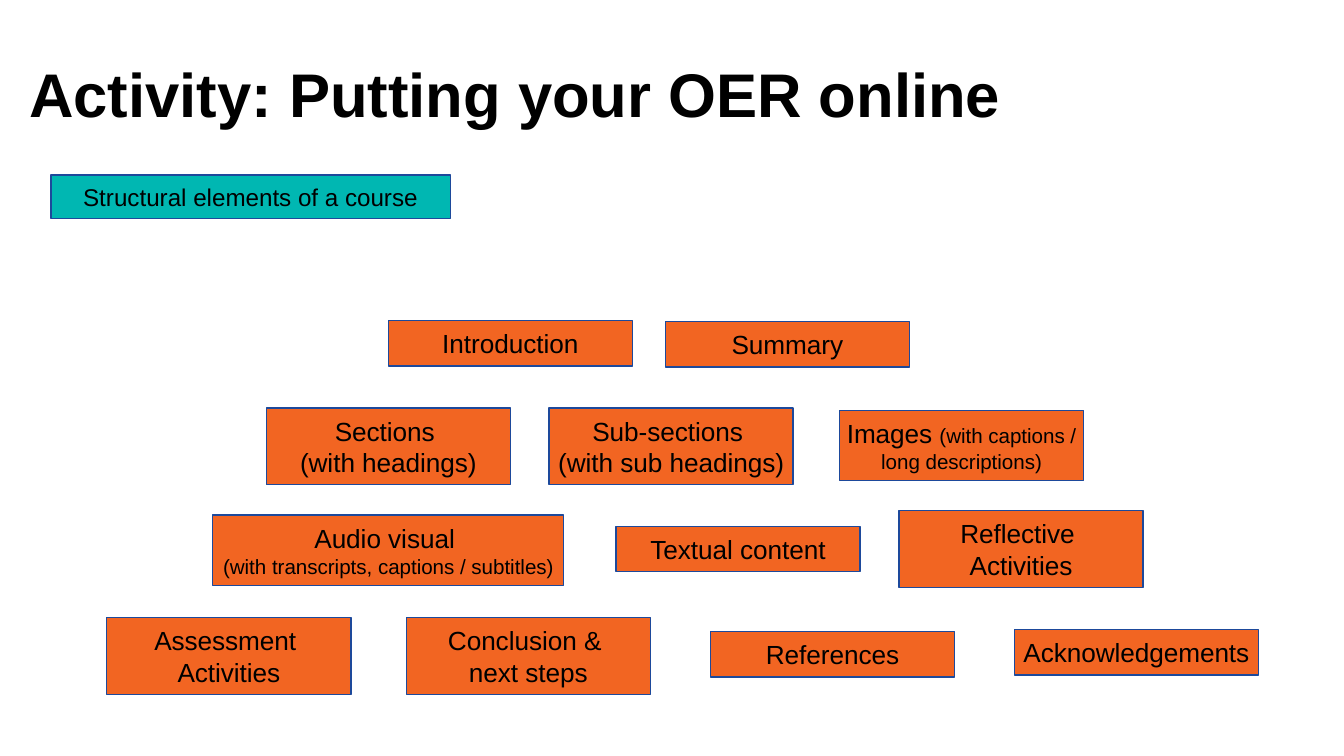
"""Build the slide on the structural elements of an online course."""
from pptx import Presentation
from pptx.dml.color import RGBColor
from pptx.enum.shapes import MSO_SHAPE
from pptx.enum.text import MSO_ANCHOR, PP_ALIGN
from pptx.util import Pt


def rgb(code):
    return RGBColor.from_string(code)


def write(p, text, size=18.67, bold=False, align=PP_ALIGN.CENTER):
    p.alignment = align
    for i, line in enumerate(text.split("\n")):
        if i:
            p.add_line_break()
        if line:
            r = p.add_run()
            r.text = line
            r.font.name = "Arial"
            r.font.size = Pt(size)
            r.font.bold = bold
            r.font.color.rgb = rgb("000000")


prs = Presentation()
prs.slide_width, prs.slide_height = Pt(960), Pt(540)
s = prs.slides.add_slide(prs.slide_layouts[5])

title = s.shapes.title
title.left, title.top, title.width, title.height = Pt(13.7), Pt(36), Pt(715.7), Pt(60.5)
tf = title.text_frame
tf.word_wrap = False
tf.vertical_anchor = MSO_ANCHOR.MIDDLE
write(tf.paragraphs[0], "Activity: Putting your OER online", size=44, bold=True, align=PP_ALIGN.LEFT)

TEAL, ORANGE = "00B7B2", "F26522"
LARGE, MEDIUM, SMALL = 18.67, 17.33, 14.67
WIDE, ONE, TWO, MIXED = 174.4, 32.4, 54.7, 50.2
boxes = [
    (36.3, 125, 285.3, 31, TEAL, [("Structural elements of a course", MEDIUM)]),
    (277.3, 229, WIDE, ONE, ORANGE, [("Introduction", LARGE)]),
    (475.2, 229.7, WIDE, ONE, ORANGE, [("Summary", LARGE)]),
    (190.2, 291.5, WIDE, TWO, ORANGE, [("Sections \n(with headings)", LARGE)]),
    (392.2, 291.5, WIDE, TWO, ORANGE, [("Sub-sections \n(with sub headings)", LARGE)]),
    (599.6, 293.2, WIDE, MIXED, ORANGE,
     [("Images ", LARGE), ("(with captions / long descriptions)", SMALL)]),
    (152, 368, 250.6, MIXED, ORANGE,
     [("Audio visual \n", LARGE), ("(with transcripts, captions / subtitles)", SMALL)]),
    (440, 376, WIDE, ONE, ORANGE, [("Textual content", LARGE)]),
    (642.2, 364.8, WIDE, TWO, ORANGE, [("Reflective \nActivities", LARGE)]),
    (76.3, 441.2, WIDE, TWO, ORANGE, [("Assessment \nActivities", LARGE)]),
    (290.2, 441.2, WIDE, TWO, ORANGE, [("Conclusion & \nnext steps", LARGE)]),
    (507.5, 451.2, WIDE, ONE, ORANGE, [("References", LARGE)]),
    (724.5, 449.8, WIDE, ONE, ORANGE, [("Acknowledgements", LARGE)]),
]
for x, y, w, h, fill, parts in boxes:
    sp = s.shapes.add_shape(MSO_SHAPE.RECTANGLE, Pt(x), Pt(y), Pt(w), Pt(h))
    sp.shadow.inherit = False
    sp.fill.solid()
    sp.fill.fore_color.rgb = rgb(fill)
    sp.line.color.rgb = rgb("1D499B")
    sp.line.width = Pt(1)
    tf = sp.text_frame
    tf.word_wrap = True
    tf.vertical_anchor = MSO_ANCHOR.MIDDLE
    tf.margin_left = tf.margin_right = Pt(3)
    tf.margin_top = tf.margin_bottom = Pt(5)
    for text, size in parts:
        write(tf.paragraphs[0], text, size=size)

prs.save("out.pptx")
